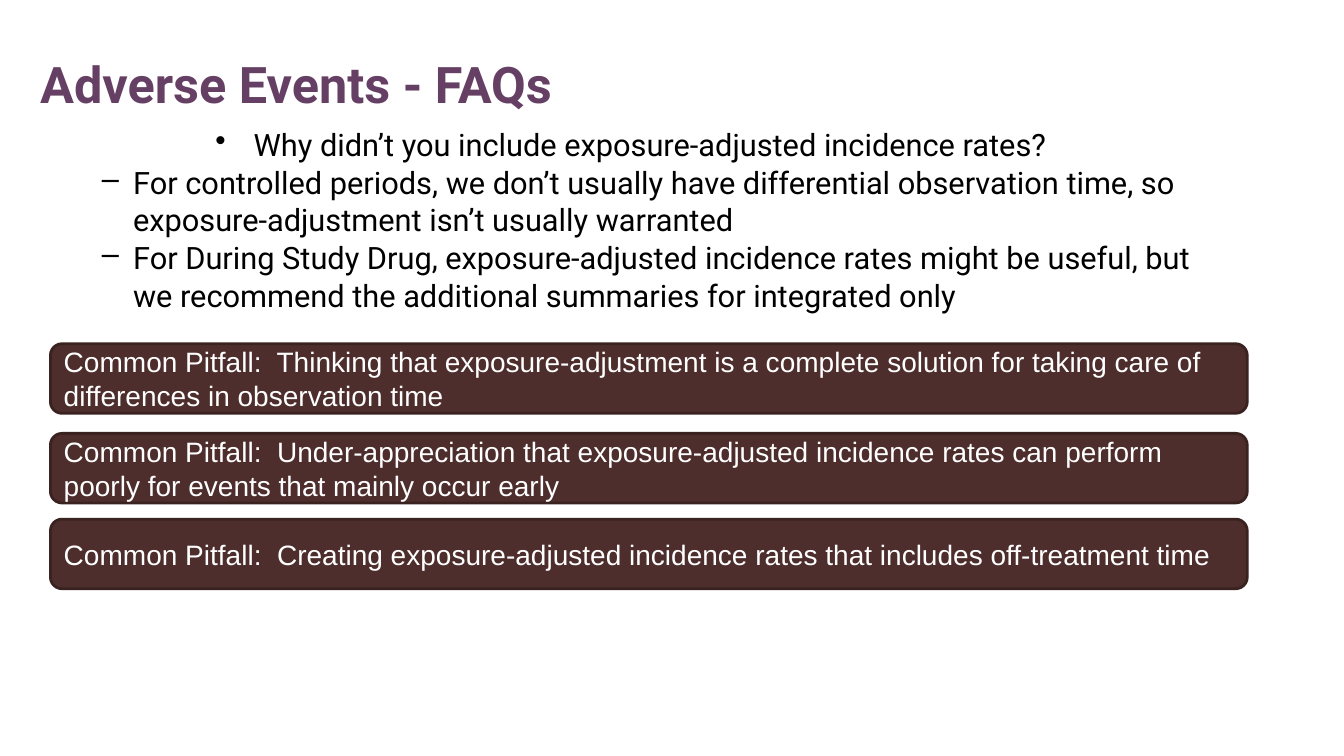
from dataclasses import dataclass

from lxml.etree import SubElement
from pptx import Presentation
from pptx.dml.color import RGBColor
from pptx.enum.shapes import MSO_SHAPE
from pptx.enum.text import MSO_ANCHOR, PP_ALIGN
from pptx.oxml.ns import qn
from pptx.shapes.autoshape import Shape
from pptx.slide import Slide
from pptx.text.text import TextFrame, _Paragraph
from pptx.util import Inches, Pt

SLIDE_W, SLIDE_H = Inches(13.33), Inches(7.5)
PLUM, BLACK, WHITE = "663F64", "000000", "FFFFFF"
BROWN, DARK_BROWN = "4E2E2D", "3A2221"


@dataclass(frozen=True)
class Area:
    """A rectangle in percent of the slide's width and height."""
    x: float
    y: float
    w: float
    h: float

    def emu(self) -> tuple[int, int, int, int]:
        return (round(SLIDE_W * self.x / 100), round(SLIDE_H * self.y / 100),
                round(SLIDE_W * self.w / 100), round(SLIDE_H * self.h / 100))


@dataclass(frozen=True)
class Style:
    font: str
    size: int
    color: str
    bold: bool = False


@dataclass(frozen=True)
class Point:
    text: str
    bullet: str = "–"
    level: int = 1
    margin: float = 0.81
    hanging: float = 0.31
    align: PP_ALIGN = PP_ALIGN.LEFT


@dataclass(frozen=True)
class Pitfall:
    y: float
    text: str


TITLE_STYLE = Style("Roboto", 36, PLUM, True)
POINT_STYLE = Style("Roboto", 22, BLACK)
PITFALL_STYLE = Style("Arial", 20, WHITE)

POINTS = [
    Point("Why didn’t you include exposure-adjusted incidence rates?",
          "•", 0, 0.38, 0.38, PP_ALIGN.CENTER),
    Point("For controlled periods, we don’t usually have differential observation "
          "time, so exposure-adjustment isn’t usually warranted"),
    Point("For During Study Drug, exposure-adjusted incidence rates might be useful, "
          "but we recommend the additional summaries for integrated only"),
]
PITFALLS = [
    Pitfall(45.47, "Thinking that exposure-adjustment is a complete solution for "
                   "taking care of differences in observation time"),
    Pitfall(57.33, "Under-appreciation that exposure-adjusted incidence rates can "
                   "perform poorly for events that mainly occur early"),
    Pitfall(68.67, "Creating exposure-adjusted incidence rates that includes "
                   "off-treatment time"),
]


def rgb(color: str) -> RGBColor:
    return RGBColor.from_string(color)


def add_run(p: _Paragraph, text: str, style: Style) -> None:
    r = p.add_run()
    r.text = text
    r.font.name = style.font
    r.font.size = Pt(style.size)
    r.font.bold = style.bold
    r.font.color.rgb = rgb(style.color)


def add_text_box(s: Slide, area: Area) -> TextFrame:
    tf = s.shapes.add_textbox(*area.emu()).text_frame
    tf.word_wrap = True
    return tf


def add_title(s: Slide, text: str) -> None:
    tf = add_text_box(s, Area(2.25, 6.13, 95.87, 10.8))
    tf.vertical_anchor = MSO_ANCHOR.MIDDLE
    p = tf.paragraphs[0]
    p.line_spacing = 0.9
    add_run(p, text, TITLE_STYLE)


def add_points(s: Slide, points: list[Point]) -> None:
    tf = add_text_box(s, Area(2.33, 15.87, 88.45, 28.93))
    tf.margin_left = Inches(0.2)
    for i, point in enumerate(points):
        p = tf.add_paragraph() if i else tf.paragraphs[0]
        p.level = point.level
        p.alignment = point.align
        p.line_spacing = 1.02
        pPr = p._p.get_or_add_pPr()
        pPr.set("marL", str(Inches(point.margin)))
        pPr.set("indent", str(-Inches(point.hanging)))
        SubElement(pPr, qn("a:buChar"), char=point.bullet)
        add_run(p, point.text, POINT_STYLE)


def add_pitfall(s: Slide, pitfall: Pitfall) -> Shape:
    area = Area(3.75, pitfall.y, 89.05, 9.2)
    sp = s.shapes.add_shape(MSO_SHAPE.ROUNDED_RECTANGLE, *area.emu())
    sp.shadow.inherit = False
    sp.fill.solid()
    sp.fill.fore_color.rgb = rgb(BROWN)
    sp.line.color.rgb = rgb(DARK_BROWN)
    sp.line.width = Pt(2)
    tf = sp.text_frame
    tf.word_wrap = True
    tf.vertical_anchor = MSO_ANCHOR.MIDDLE
    p = tf.paragraphs[0]
    p.alignment = PP_ALIGN.LEFT
    add_run(p, f"Common Pitfall:  {pitfall.text}", PITFALL_STYLE)
    return sp


def main() -> None:
    prs = Presentation()
    prs.slide_width, prs.slide_height = SLIDE_W, SLIDE_H
    s = prs.slides.add_slide(prs.slide_layouts[6])
    add_title(s, "Adverse Events - FAQs")
    add_points(s, POINTS)
    for pitfall in PITFALLS:
        add_pitfall(s, pitfall)
    prs.save("out.pptx")


if __name__ == "__main__":
    main()
